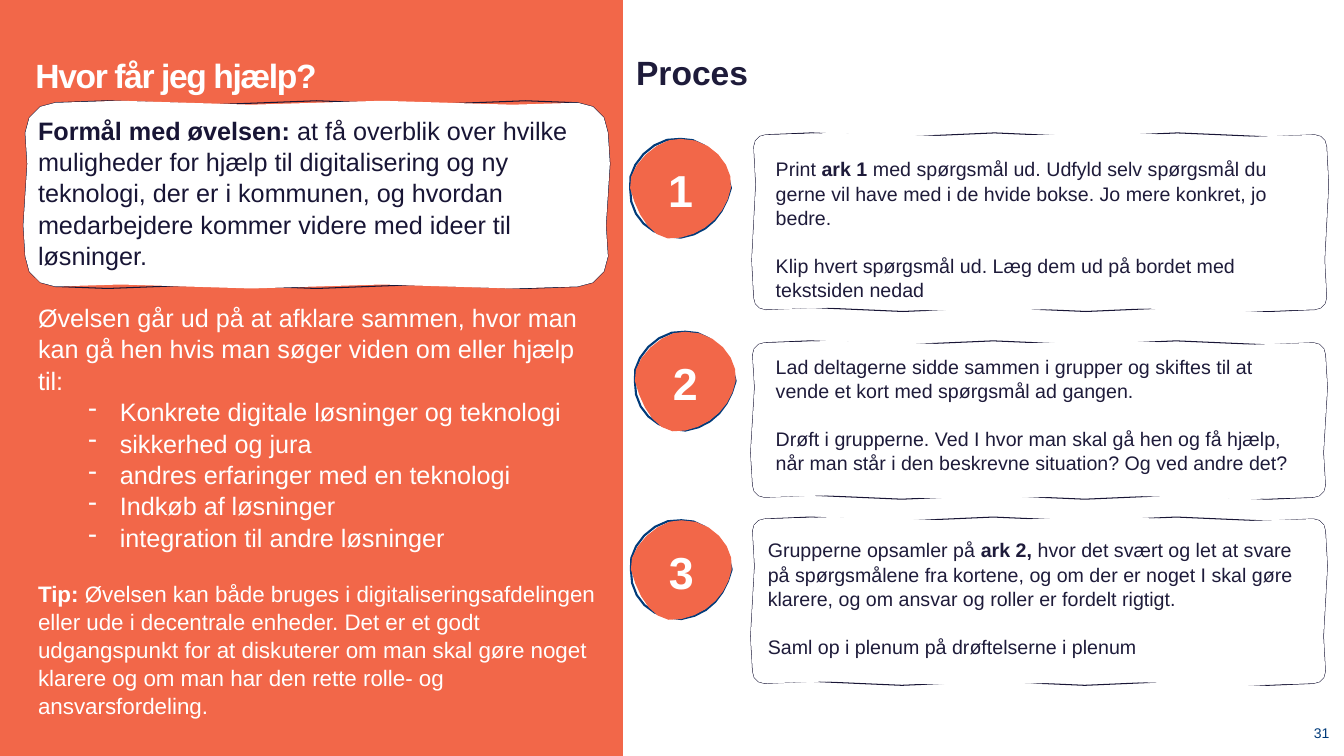
from math import cos, pi, radians, sin

from lxml.etree import SubElement
from pptx import Presentation
from pptx.dml.color import RGBColor
from pptx.enum.shapes import MSO_SHAPE
from pptx.enum.text import MSO_ANCHOR, MSO_AUTO_SIZE, PP_ALIGN
from pptx.oxml.ns import qn
from pptx.util import Cm, Pt

COLORS = {"coral": "F26749", "white": "FFFFFF", "navy": "1E1B3A",
          "ink": "181535", "blue": "003B7A"}
LINE_SPACING = 1.04


def draw_outline(points, fill=None, line=None, width=0.75):
    """Draw a closed freeform through points given in centimetres."""
    corners = [(Cm(x), Cm(y)) for x, y in points]
    builder = slide.shapes.build_freeform(*corners[0], scale=1.0)
    builder.add_line_segments(corners[1:], close=True)
    shape = builder.convert_to_shape()
    shape.shadow.inherit = False
    if fill:
        shape.fill.solid()
        shape.fill.fore_color.rgb = RGBColor.from_string(COLORS[fill])
    else:
        shape.fill.background()
    if line:
        shape.line.color.rgb = RGBColor.from_string(COLORS[line])
        shape.line.width = Pt(width)
    else:
        shape.line.fill.background()
    return shape


def write_text(shape, paragraphs, size, color, frame_format=None, **shared):
    """Fill a shape with (runs, format) paragraphs; a run is (text, bold)."""
    frame = shape.text_frame
    settings = {"word_wrap": True, "auto_size": MSO_AUTO_SIZE.NONE}
    for name, value in (settings | (frame_format or {})).items():
        setattr(frame, name, value)
    for index, (runs, own) in enumerate(paragraphs):
        paragraph = frame.add_paragraph() if index else frame.paragraphs[0]
        look = {"size": size, "color": color, "left": 0, "hanging": 0} | shared | own
        paragraph.line_spacing = LINE_SPACING
        paragraph.alignment = look.get("alignment", PP_ALIGN.LEFT)
        if "before" in look:
            paragraph.space_before = Pt(look["before"])
        properties = paragraph._p.get_or_add_pPr()
        properties.set("marL", str(Cm(look["left"])))
        properties.set("indent", str(-Cm(look["hanging"])))
        if "bullet" in look:
            SubElement(properties, qn("a:buChar")).set("char", look["bullet"])
        for text, bold in runs:
            run = paragraph.add_run()
            run.text = text
            font_format = {"name": "Arial", "size": Pt(look["size"]), "bold": bold}
            for name, value in font_format.items():
                setattr(run.font, name, value)
            run.font.color.rgb = RGBColor.from_string(COLORS[look["color"]])


presentation = Presentation()
presentation.slide_width, presentation.slide_height = Cm(33.87), Cm(19.05)
slide = presentation.slides.add_slide(presentation.slide_layouts[5])

# Coral panel behind the title
panel = slide.shapes.add_shape(MSO_SHAPE.RECTANGLE, 0, 0, Cm(15.7), Cm(19.05))
panel.shadow.inherit = False
panel.fill.solid()
panel.fill.fore_color.rgb = RGBColor.from_string(COLORS["coral"])
panel.line.fill.background()
slide.shapes._spTree.insert(2, panel._element)

title = slide.shapes.title
title.left, title.top, title.width, title.height = Cm(0.64), Cm(1.17), Cm(20.52), Cm(1.42)
write_text(title, [([("Hvor får jeg hjælp?", True)], {})], 24, "white",
           {"vertical_anchor": MSO_ANCHOR.MIDDLE})
title.text_frame.paragraphs[0].runs[0]._r.get_or_add_rPr().set("spc", "-100")

# Hand-drawn boxes: a wavy line, partly covered by a fill with other waves
boxes = [  # left, top, width, height, corner radius
    (0.64, 2.59, 14.68, 4.63, 0.76),
    (19, 3.4, 14.43, 4.4, 0.3),
    (18.97, 8.64, 14.43, 3.89, 0.3),
    (18.97, 13.08, 14.43, 4.14, 0.3),
]
for left, top, width, height, radius in boxes:
    right, bottom = left + width - radius, top + height - radius
    centers = [(left + radius, top + radius), (right, top + radius),
               (right, bottom), (left + radius, bottom)]
    for wavelength, look in ((4.8, {"line": "ink"}), (7, {"fill": "white"})):
        outline = []
        for side, (x, y) in enumerate(centers):
            for step in range(4):
                angle = radians(180 + 90 * side + 30 * step)
                outline.append((x + radius * cos(angle), y + radius * sin(angle)))
            next_x, next_y = centers[(side + 1) % 4]
            length = abs(next_x - x) + abs(next_y - y)
            parts = 2 * max(2, round(2 * length / wavelength))
            for step in range(1, parts):
                reach = radius + 0.05 * sin(pi * step / 2)
                outline.append((x + (next_x - x) * step / parts + reach * cos(angle),
                                y + (next_y - y) * step / parts + reach * sin(angle)))
        draw_outline(outline, **look)

# Numbered discs: Bezier curves (two handles and an end point each)
disc_start = (0, 1.24)
disc_line = [((-0.1, 0.69), (0.58, -0.08), (1.27, 0)),
             ((1.9, -0.05), (2.46, 0.64), (2.54, 1.24)),
             ((2.39, 1.85), (2.01, 2.39), (1.27, 2.49)),
             ((0.51, 2.49), (-0.03, 1.96), disc_start)]
disc_fill = [((-0.08, 0.69), (0.71, -0.05), (1.27, 0)),
             ((2.03, -0.03), (2.62, 0.66), (2.54, 1.24)),
             ((2.44, 1.83), (1.96, 2.36), (1.27, 2.49)),
             ((0.58, 2.67), (0.18, 1.93), disc_start)]
disc_places = [(15.88, 3.5), (16, 8.36), (15.9, 13.11)]
for number, (left, top) in enumerate(disc_places, start=1):
    for curves, look in ((disc_line, {"line": "blue", "width": 1.5}),
                         (disc_fill, {"fill": "coral"})):
        outline, start = [], disc_start
        for first, second, end in curves:
            for step in range(6):
                t = step / 6
                weights = ((1 - t) ** 3, 3 * t * (1 - t) ** 2, 3 * t * t * (1 - t), t ** 3)
                x, y = (sum(weight * point[axis] for weight, point
                            in zip(weights, (start, first, second, end)))
                        for axis in (0, 1))
                outline.append((left + x, top + y))
            start = end
        disc = draw_outline(outline, **look)
    write_text(disc, [([(str(number), True)], {})], 32, "white",
               {"vertical_anchor": MSO_ANCHOR.MIDDLE}, alignment=PP_ALIGN.CENTER)

# Texts
no_margins = {f"margin_{side}": 0 for side in ("left", "top", "right", "bottom")}
heading = slide.shapes.add_textbox(Cm(16.03), Cm(1.27), Cm(5.92), Cm(1))
write_text(heading, [([("Proces", True)], {})], 24, "navy", no_margins)

steps = [  # left, top, width, height, runs of the first paragraph, second paragraph
    (18.03, 3.81, 15.47, 4,
     [("Print ", False), ("ark 1 ", True),
      ("med spørgsmål ud. Udfyld selv spørgsmål du gerne vil have med i de hvide "
       "bokse. Jo mere konkret, jo bedre.", False)],
     "Klip hvert spørgsmål ud. Læg dem ud på bordet med tekstsiden nedad"),
    (18.03, 8.79, 15.09, 3.6,
     [("Lad deltagerne sidde sammen i grupper og skiftes til at vende et kort med "
       "spørgsmål ad gangen.", False)],
     "Drøft i grupperne. Ved I hvor man skal gå hen og få hjælp, når man står i den "
     "beskrevne situation? Og ved andre det?"),
    (17.83, 13.41, 15.47, 3.25,
     [("Grupperne opsamler på ", False), ("ark 2, ", True),
      ("hvor det svært og let at svare på spørgsmålene fra kortene, og om der er noget "
       "I skal gøre klarere, og om ansvar og roller er fordelt rigtigt.", False)],
     "Saml op i plenum på drøftelserne i plenum"),
]
for left, top, width, height, opening, closing in steps:
    step_text = slide.shapes.add_textbox(Cm(left), Cm(top), Cm(width), Cm(height))
    write_text(step_text, [(opening, {}), ([(closing, False)], {"before": 16.7})],
               14, "navy", left=1.27)

topics = ["Konkrete digitale løsninger og teknologi", "sikkerhed og jura",
          "andres erfaringer med en teknologi", "Indkøb af løsninger",
          "integration til andre løsninger"]
topic_format = {"left": 3.33, "hanging": 0.79, "bullet": "-"}
purpose = [
    ([("Formål med øvelsen: ", True),
      ("at få overblik over hvilke muligheder for hjælp til digitalisering og ny "
       "teknologi, der er i kommunen, og hvordan medarbejdere kommer videre med ideer "
       "til løsninger.", False)], {"color": "ink"}),
    ([("Øvelsen går ud på at afklare sammen, hvor man kan gå hen hvis man søger viden "
       "om eller hjælp til:", False)], {"before": 21.5}),
    *(([(topic, False)], topic_format) for topic in topics),
    ([("Tip: ", True),
      ("Øvelsen kan både bruges i digitaliseringsafdelingen eller ude i decentrale "
       "enheder. Det er et godt udgangspunkt for at diskuterer om man skal gøre noget "
       "klarere og om man har den rette rolle- og ansvarsfordeling.", False)],
     {"size": 16, "before": 19.1}),
]
purpose_text = slide.shapes.add_textbox(Cm(-0.56), Cm(2.74), Cm(15.88), Cm(15.5))
write_text(purpose_text, purpose, 18, "white", left=1.27)

page_number = slide.shapes.add_textbox(Cm(31.95), Cm(17.45), Cm(1.55), Cm(1.22))
write_text(page_number, [([("31", False)], {})], 10, "blue",
           no_margins | {"vertical_anchor": MSO_ANCHOR.BOTTOM}, alignment=PP_ALIGN.RIGHT)

presentation.save("out.pptx")
